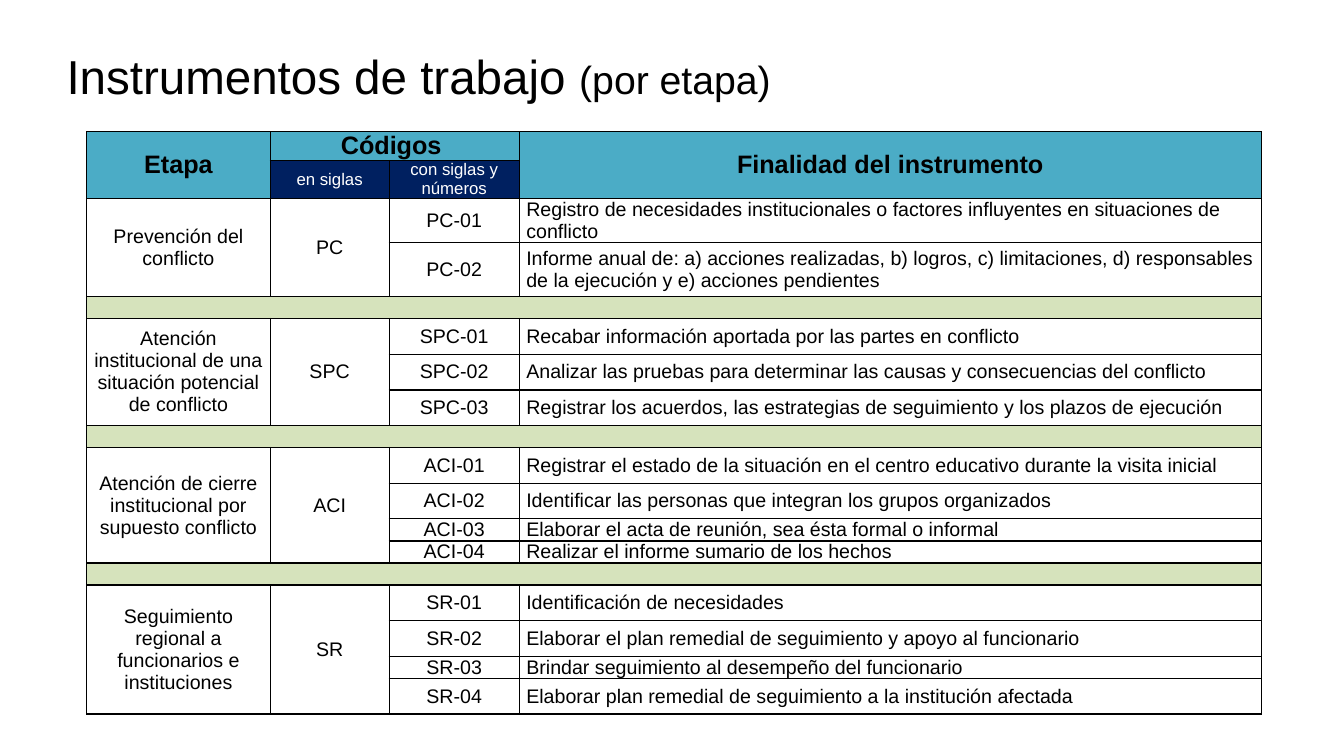
"""Build a slide with the table of work instruments for each stage."""
from lxml.etree import SubElement
from pptx import Presentation
from pptx.dml.color import RGBColor
from pptx.enum.text import MSO_ANCHOR, MSO_AUTO_SIZE, PP_ALIGN
from pptx.oxml.ns import qn
from pptx.util import Pt

BLACK, WHITE, NAVY, TEAL, GREEN = "000000", "FFFFFF", "002060", "4BACC6", "D6E3BC"
LEFT, CENTER, JUSTIFY = PP_ALIGN.LEFT, PP_ALIGN.CENTER, PP_ALIGN.JUSTIFY
THIN, TALL = 15.7, 25.5

header_cells = [
    (0, 0, 1, 0, "Etapa", TEAL, 18, BLACK, True),
    (0, 1, 0, 2, "Códigos ", TEAL, 18, BLACK, True),
    (0, 3, 1, 3, "Finalidad del instrumento", TEAL, 18, BLACK, True),
    (1, 1, 1, 1, "en siglas", NAVY, 12, WHITE, False),
    (1, 2, 1, 2, "con siglas y números", NAVY, 12, WHITE, False),
]
stages = [
    ("Prevención del conflicto", "PC", LEFT, [
        (31.3, "Registro de necesidades institucionales o factores influyentes "
               "en situaciones de conflicto"),
        (38.8, "Informe anual de: a) acciones realizadas, b) logros, c) limitaciones, "
               "d) responsables de la ejecución y e) acciones pendientes"),
    ]),
    ("Atención institucional de una situación potencial de conflicto", "SPC", JUSTIFY, [
        (TALL, "Recabar información aportada por las partes en conflicto"),
        (TALL, "Analizar las pruebas para determinar las causas y consecuencias del conflicto"),
        (TALL, "Registrar los acuerdos, las estrategias de seguimiento y los plazos de ejecución"),
    ]),
    ("Atención de cierre institucional por supuesto conflicto", "ACI", JUSTIFY, [
        (TALL, "Registrar el estado de la situación en el centro educativo "
               "durante la visita inicial"),
        (TALL, "Identificar las personas que integran los grupos organizados"),
        (THIN, "Elaborar el acta de reunión, sea ésta formal o informal"),
        (THIN, "Realizar el informe sumario de los hechos"),
    ]),
    ("Seguimiento regional a funcionarios e instituciones", "SR", JUSTIFY, [
        (TALL, "Identificación de necesidades"),
        (TALL, "Elaborar el plan remedial de seguimiento y apoyo al funcionario"),
        (THIN, "Brindar seguimiento al desempeño del funcionario"),
        (TALL, "Elaborar plan remedial de seguimiento a la institución afectada"),
    ]),
]


def color(value):
    return RGBColor.from_string(value)


def write(cell, text, fill=WHITE, size=14, font_color=BLACK, bold=False, alignment=CENTER):
    cell.fill.solid()
    cell.fill.fore_color.rgb = color(fill)
    paragraph = cell.text_frame.paragraphs[0]
    paragraph.alignment = alignment
    run = paragraph.add_run()
    run.text = text
    for name, value in {"name": "Arial", "size": Pt(size), "bold": bold}.items():
        setattr(run.font, name, value)
    run.font.color.rgb = color(font_color)


presentation = Presentation()
presentation.slide_width, presentation.slide_height = Pt(960), Pt(540)
slide = presentation.slides.add_slide(presentation.slide_layouts[5])

title = slide.shapes.title
title_format = {"left": Pt(40.3), "top": Pt(29.5), "width": Pt(796.3), "height": Pt(48.2)}
for name, value in title_format.items():
    setattr(title, name, value)
frame_format = {"word_wrap": True, "vertical_anchor": MSO_ANCHOR.MIDDLE,
                "auto_size": MSO_AUTO_SIZE.NONE}
for name, value in frame_format.items():
    setattr(title.text_frame, name, value)
paragraph = title.text_frame.paragraphs[0]
paragraph.alignment = LEFT
for text, size in [("Instrumentos de trabajo ", 34), ("(por etapa)", 28)]:
    run = paragraph.add_run()
    run.text = text
    for name, value in {"name": "Arial", "size": Pt(size)}.items():
        setattr(run.font, name, value)
    run.font.color.rgb = color(BLACK)

heights = [20.7, 26.8]
for stage, code, alignment, instruments in stages:
    heights += [height for height, purpose in instruments] + [THIN]
heights.pop()
widths = [131, 85, 93, 530]
table = slide.shapes.add_table(
    len(heights), len(widths), Pt(62), Pt(94), Pt(sum(widths)), Pt(sum(heights))).table
table.first_row = table.horz_banding = False
for column, width in zip(table.columns, widths):
    column.width = Pt(width)
for row, height in zip(table.rows, heights):
    row.height = Pt(height)

cell_format = {"vertical_anchor": MSO_ANCHOR.MIDDLE, "margin_left": Pt(5),
               "margin_right": Pt(5), "margin_top": 0, "margin_bottom": 0}
for cell in table.iter_cells():
    for name, value in cell_format.items():
        setattr(cell, name, value)
    properties = cell._tc.get_or_add_tcPr()
    for side in ("a:lnL", "a:lnR", "a:lnT", "a:lnB"):
        line = SubElement(properties, qn(side), w=str(Pt(1)))
        SubElement(SubElement(line, qn("a:solidFill")), qn("a:srgbClr"), val=BLACK)
    end = SubElement(cell.text_frame.paragraphs[0]._p, qn("a:endParaRPr"), sz="1200")
    SubElement(end, qn("a:latin"), typeface="Arial")

for top, left, bottom, right, *content in header_cells:
    if (top, left) != (bottom, right):
        table.cell(top, left).merge(table.cell(bottom, right))
    write(table.cell(top, left), *content)

first = 2
for stage, code, alignment, instruments in stages:
    last = first + len(instruments) - 1
    for column, text in enumerate((stage, code)):
        table.cell(first, column).merge(table.cell(last, column))
        write(table.cell(first, column), text)
    for number, (height, purpose) in enumerate(instruments, 1):
        row = first + number - 1
        write(table.cell(row, 2), f"{code}-{number:02}")
        write(table.cell(row, 3), purpose, alignment=alignment)
    first = last + 2
    if first < len(heights):
        separator = table.cell(last + 1, 0)
        separator.merge(table.cell(last + 1, 3))
        separator.fill.solid()
        separator.fill.fore_color.rgb = color(GREEN)

presentation.save("out.pptx")
